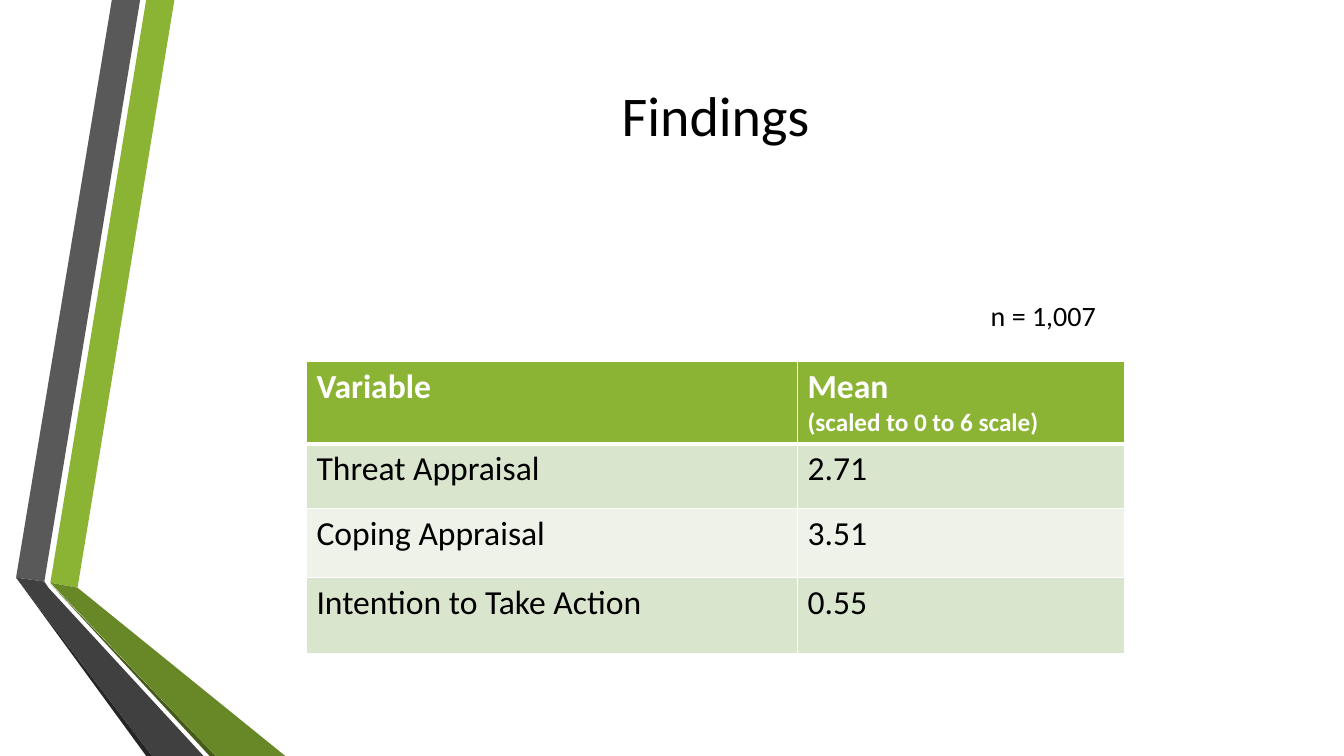
from lxml import etree
from pptx import Presentation
from pptx.dml.color import RGBColor
from pptx.enum.text import PP_ALIGN
from pptx.oxml.ns import qn
from pptx.util import Pt

CENTER = PP_ALIGN.CENTER
LEFT = PP_ALIGN.LEFT
FONT = "Calibri"
COLORS = {
    "white": "FFFFFF", "black": "000000",
    "green": "8BB434", "green_foot": "688727", "green_edge": "465A1A",
    "gray": "595959", "gray_foot": "404040", "gray_edge": "262626",
    "band_dark": "DAE5CE", "band_light": "EEF2E8",
}
RIBBONS = [
    ("green", [(36, 416.2), (55.4, 419.8), (124.6, 0), (104.4, 0)]),
    ("gray", [(100.1, 0), (79.9, 0), (11.5, 412.6), (31.7, 415.4)]),
    ("gray_edge", [(11.5, 412.6), (104.4, 540), (108.7, 540)]),
    ("green_edge", [(36, 416.9), (149.8, 540), (154.1, 540)]),
    ("green_foot", [(36, 416.2), (154.1, 540), (203.8, 540), (55.4, 419.8)]),
    ("gray_foot", [(145.4, 540), (34.6, 419.8), (31.7, 415.4),
                   (11.5, 412.6), (108.7, 540)]),
]
FINDINGS = [
    ("Variable", "Mean\n(scaled to 0 to 6 scale)"),
    ("Threat Appraisal", "2.71"),
    ("Coping Appraisal", "3.51"),
    ("Intention to Take Action", "0.55"),
]
ROW_FILLS = ["green", "band_dark", "band_light", "band_dark"]
ROW_HEIGHTS = [57.6, 46.1, 49.7, 54]
COLUMN_SHARES = [0.6, 0.4]


def rgb(name):
    """Return the named colour."""
    return RGBColor.from_string(COLORS[name])


def write_lines(frame, text, sizes, color, bold=False, align=LEFT):
    """Write one paragraph per line of text, each at its own size."""
    for index, (line, size) in enumerate(zip(text.split("\n"), sizes)):
        para = frame.paragraphs[0] if index == 0 else frame.add_paragraph()
        para.alignment = align
        span = para.add_run()
        span.text = line
        span.font.color.rgb = rgb(color)
        for key, value in {"name": FONT, "size": Pt(size), "bold": bold}.items():
            setattr(span.font, key, value)


def add_ribbons(page, left, top):
    """Draw the folded ribbons from the given corner."""
    group = page.shapes.add_group_shape()
    for color, corners in RIBBONS:
        points = [((left + x) * 10, (top + y) * 10) for x, y in corners]
        builder = group.shapes.build_freeform(*points[0], scale=Pt(0.1))
        builder.add_line_segments(points[1:], close=True)
        ribbon = builder.convert_to_shape()
        ribbon.shadow.inherit = False
        ribbon.fill.solid()
        ribbon.fill.fore_color.rgb = rgb(color)
        ribbon.line.fill.background()


def add_text(page, left, top, width, height, text, size, align=LEFT):
    """Place a line of black text in the given box."""
    box = page.shapes.add_textbox(Pt(left), Pt(top), Pt(width), Pt(height))
    box.text_frame.word_wrap = True
    write_lines(box.text_frame, text, [size], "black", align=align)


def set_borders(cell, widths):
    """Give the cell white borders of the widths listed by side."""
    properties = cell._tc.get_or_add_tcPr()
    for index, (side, width) in enumerate(widths.items()):
        line = etree.Element(qn(f"a:ln{side}"), w=str(Pt(width)))
        fill = etree.SubElement(line, qn("a:solidFill"))
        etree.SubElement(fill, qn("a:srgbClr"), val=COLORS["white"])
        properties.insert(index, line)


def add_findings_table(page, left, top, width):
    """Build the table of means with a green header and banded rows."""
    frame = page.shapes.add_table(len(FINDINGS), len(COLUMN_SHARES), Pt(left),
                                  Pt(top), Pt(width), Pt(sum(ROW_HEIGHTS)))
    table = frame.table
    for column, share in zip(table.columns, COLUMN_SHARES):
        column.width = Pt(width * share)
    for row_index, values in enumerate(FINDINGS):
        header = row_index == 0
        table.rows[row_index].height = Pt(ROW_HEIGHTS[row_index])
        for column_index, text in enumerate(values):
            cell = table.cell(row_index, column_index)
            cell.fill.solid()
            cell.fill.fore_color.rgb = rgb(ROW_FILLS[row_index])
            write_lines(cell.text_frame, text, [24, 18],
                        "white" if header else "black", bold=header)
            set_borders(cell, {"L": 1, "R": 1, "T": 3 if row_index == 1 else 1,
                               "B": 3 if header else 1})


def main():
    """Build and save the findings slide."""
    deck = Presentation()
    deck.slide_width, deck.slide_height = Pt(960), Pt(540)
    page = deck.slides.add_slide(deck.slide_layouts[6])
    add_ribbons(page, 0, 0)
    add_findings_table(page, 218.9, 258.5, 584.6)
    add_text(page, 700.6, 209.5, 103, 31.7, "n = 1,007", 20)
    add_text(page, 116.6, 54, 789.1, 138.2, "Findings", 40, CENTER)
    deck.save("out.pptx")


if __name__ == "__main__":
    main()
